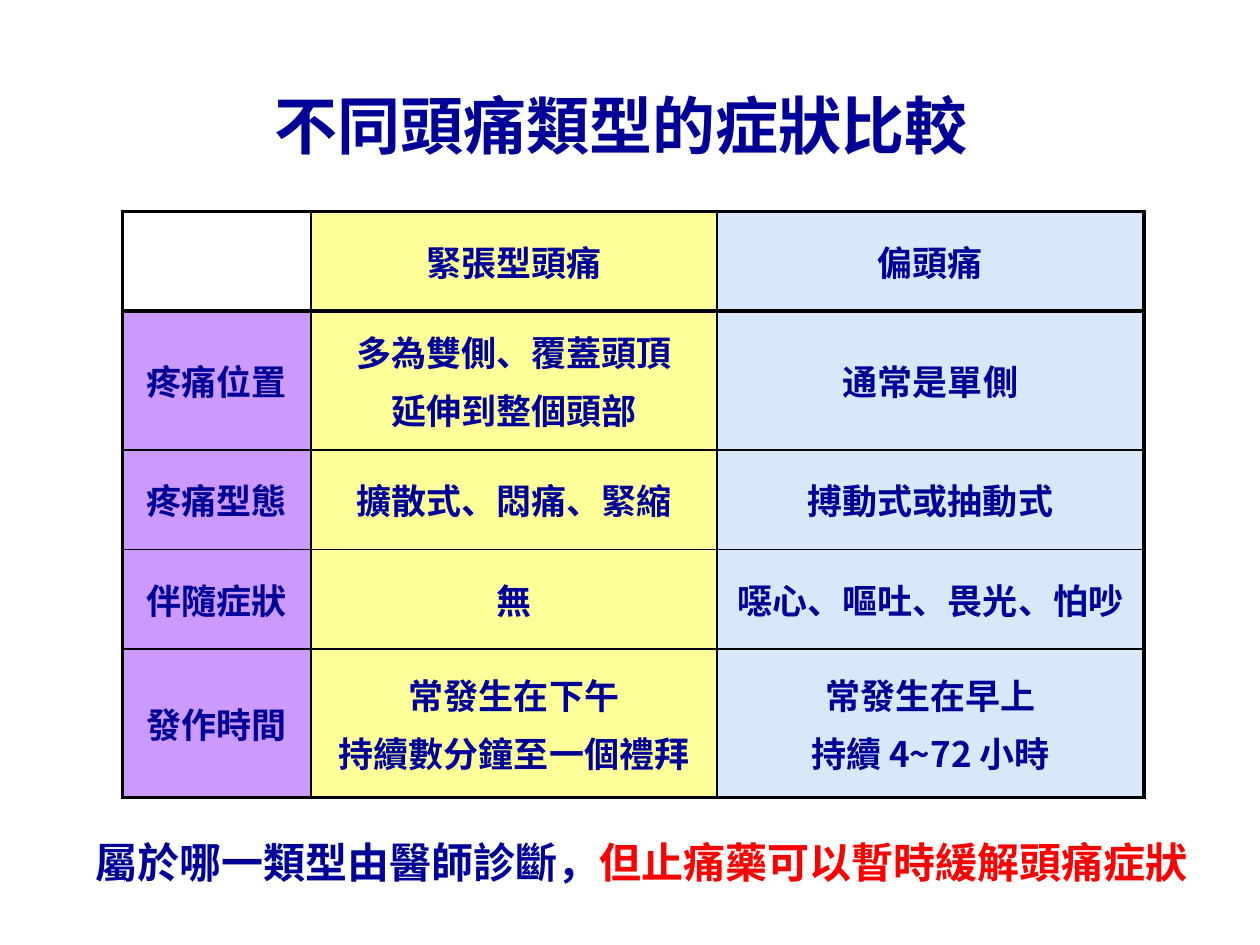
from typing import NamedTuple, Optional

from lxml import etree
from pptx import Presentation
from pptx.dml.color import RGBColor
from pptx.enum.text import MSO_ANCHOR, PP_ALIGN
from pptx.oxml.ns import qn
from pptx.util import Inches, Pt

MIDDLE = MSO_ANCHOR.MIDDLE
CENTER = PP_ALIGN.CENTER
NAVY = RGBColor(0x00, 0x00, 0x99)
RED = RGBColor(0xFF, 0x00, 0x00)
BLACK = RGBColor(0x00, 0x00, 0x00)
YELLOW = RGBColor(0xFF, 0xFF, 0x99)
BLUE = RGBColor(0xB2, 0xD2, 0xF3)
PURPLE = RGBColor(0xCC, 0x99, 0xFF)
FACE = "Noto Sans CJK SC"
THIN, EDGE, HEAVY = 1, 2.25, 3


class Column(NamedTuple):
    width: float
    fill: RGBColor
    alpha: Optional[int] = None


class Row(NamedTuple):
    height: float
    texts: tuple[str, str, str]


COLUMNS = [Column(1.5, PURPLE), Column(3.22, YELLOW), Column(3.39, BLUE, 50)]
ROWS = [
    Row(0.79, ("", "緊張型頭痛", "偏頭痛")),
    Row(1.1, ("疼痛位置", "多為雙側、覆蓋頭頂\n延伸到整個頭部", "通常是單側")),
    Row(0.79, ("疼痛型態", "擴散式、悶痛、緊縮", "搏動式或抽動式")),
    Row(0.79, ("伴隨症狀", "無", "噁心、嘔吐、畏光、怕吵")),
    Row(1.18, ("發作時間", "常發生在下午\n持續數分鐘至一個禮拜", "常發生在早上\n持續 4~72 小時")),
]


def set_font(font, size: float, color: RGBColor) -> None:
    """Apply the bold face to Latin and East Asian text."""
    font.name, font.size, font.bold = FACE, Pt(size), True
    font.color.rgb = color
    latin = font._element.find(qn("a:latin"))
    asian = etree.Element(qn("a:ea"), typeface=FACE)
    latin.addnext(asian)


def add_box(slide, left: float, top: float, width: float, height: float):
    """Add a wrapping text box and return its frame."""
    box = slide.shapes.add_textbox(
        Inches(left), Inches(top), Inches(width), Inches(height))
    box.text_frame.word_wrap = True
    return box.text_frame


def add_title(slide) -> None:
    """Write the centred heading."""
    frame = add_box(slide, 0.43, 0.44, 9, 1.1)
    frame.vertical_anchor = MIDDLE
    frame.text = "不同頭痛類型的症狀比較"
    line = frame.paragraphs[0]
    line.alignment = CENTER
    set_font(line.font, 36, NAVY)


def set_border(cell, side: str, width: float) -> None:
    """Draw one black side of a cell."""
    props = cell._tc.get_or_add_tcPr()
    line = etree.SubElement(props, qn(f"a:ln{side}"), w=str(Pt(width)))
    solid = etree.SubElement(line, qn("a:solidFill"))
    etree.SubElement(solid, qn("a:srgbClr"), val=str(BLACK))


def fill_cell(cell, column: Column) -> None:
    """Colour a cell, with its opacity in percent if given."""
    cell.fill.solid()
    cell.fill.fore_color.rgb = column.fill
    if column.alpha is not None:
        color = cell._tc.tcPr.find(f".//{qn('a:solidFill')}[last()]")
        color = cell._tc.tcPr.findall(qn("a:solidFill"))[-1][0]
        etree.SubElement(color, qn("a:alpha"), val=str(column.alpha * 1000))


def write_cell(cell, text: str) -> None:
    """Write centred lines into a cell."""
    cell.text = text
    cell.vertical_anchor = MIDDLE
    for line in cell.text_frame.paragraphs:
        line.alignment = CENTER
        line.space_before = Pt(4)
        set_font(line.font, 20, NAVY)


def add_grid(slide) -> None:
    """Build the comparison table."""
    width = sum(column.width for column in COLUMNS)
    height = sum(row.height for row in ROWS)
    table = slide.shapes.add_table(
        len(ROWS), len(COLUMNS), Inches(0.97), Inches(1.68),
        Inches(width), Inches(height)).table
    table.first_row = table.horz_banding = False
    for x, column in enumerate(COLUMNS):
        table.columns[x].width = Inches(column.width)
    tops = [EDGE, HEAVY] + [THIN] * (len(ROWS) - 2) + [EDGE]
    sides = [EDGE] + [THIN] * (len(COLUMNS) - 1) + [EDGE]
    for y, row in enumerate(ROWS):
        table.rows[y].height = Inches(row.height)
        for x, text in enumerate(row.texts):
            cell = table.cell(y, x)
            set_border(cell, "L", sides[x])
            set_border(cell, "R", sides[x + 1])
            set_border(cell, "T", tops[y])
            set_border(cell, "B", tops[y + 1])
            write_cell(cell, text)
            if text:
                fill_cell(cell, COLUMNS[x])
            else:
                cell.fill.background()


def add_note(slide) -> None:
    """Write the two-colour closing line."""
    frame = add_box(slide, 0.43, 6.59, 9.23, 0.51)
    frame.margin_left = Inches(0.33)
    line = frame.paragraphs[0]
    for text, color in (("屬於哪一類型由醫師診斷，", NAVY),
                        ("但止痛藥可以暫時緩解頭痛症狀", RED)):
        run = line.add_run()
        run.text = text
        set_font(run.font, 24, color)


def main() -> None:
    """Build and save the slide."""
    deck = Presentation()
    deck.slide_width, deck.slide_height = Inches(10), Inches(7.5)
    slide = deck.slides.add_slide(deck.slide_layouts[6])
    add_title(slide)
    add_grid(slide)
    add_note(slide)
    deck.save("out.pptx")


if __name__ == "__main__":
    main()
